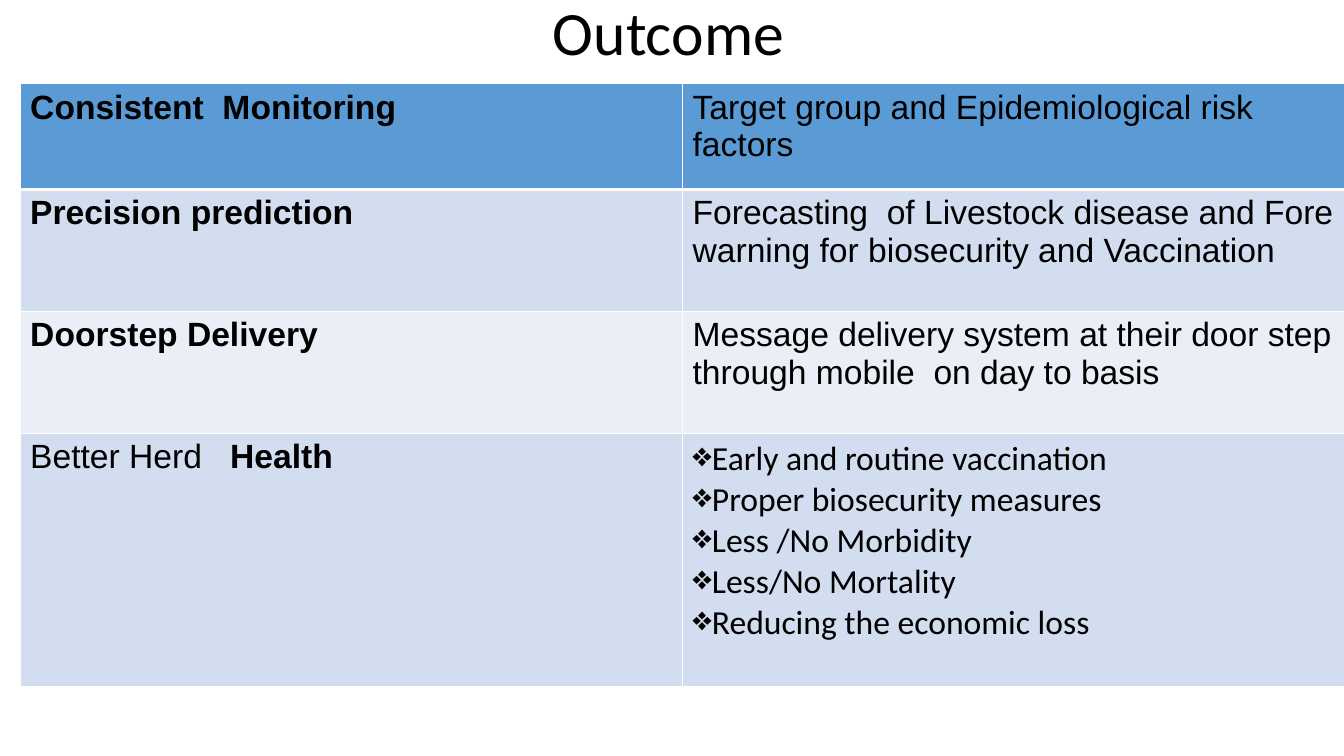
from lxml.etree import SubElement
from pptx import Presentation
from pptx.dml.color import RGBColor
from pptx.enum.text import MSO_ANCHOR, PP_ALIGN
from pptx.oxml import parse_xml
from pptx.oxml.ns import nsdecls, qn
from pptx.util import Inches, Pt

BLACK, WHITE = "000000", "FFFFFF"
HEADER, BAND_DARK, BAND_LIGHT = "5B9BD5", "D2DEEF", "EAEFF7"
BULLET_INDENT = Inches(0.19)

# Each row: height, fill, left-hand runs as (text, bold), right-hand text or bullets
OUTCOMES = [
    (1.05, HEADER, [("Consistent  Monitoring", True)],
     "Target group and Epidemiological risk factors"),
    (1.21, BAND_DARK, [("Precision prediction", True)],
     "Forecasting  of Livestock disease and Fore warning for biosecurity and Vaccination"),
    (1.21, BAND_LIGHT, [("Doorstep Delivery", True)],
     "Message delivery system at their door step through mobile  on day to basis"),
    (2.51, BAND_DARK, [("Better Herd   ", False), ("Health", True)],
     ["Early and routine vaccination", "Proper biosecurity measures",
      "Less /No Morbidity", "Less/No Mortality", "Reducing the economic loss"]),
]


def color(hex_code):
    return RGBColor.from_string(hex_code)


def add_span(para, text, size, font, bold=False):
    span = para.add_run()
    span.text = text
    span.font.size = Pt(size)
    span.font.name = font
    span.font.bold = bold
    span.font.color.rgb = color(BLACK)


def add_bullet(para):
    props = para._p.get_or_add_pPr()
    props.set("marL", str(BULLET_INDENT))
    props.set("indent", str(-BULLET_INDENT))
    SubElement(props, qn("a:buChar")).set("char", "❖")


def style_cell(cell, fill, bottom_width):
    """Fill the cell and draw white borders, the bottom one at its own width."""
    cell.fill.solid()
    cell.fill.fore_color.rgb = color(fill)
    props = cell._tc.get_or_add_tcPr()
    widths = {"lnL": 1, "lnR": 1, "lnT": 1, "lnB": bottom_width}
    for index, (side, width) in enumerate(widths.items()):
        props.insert(index, parse_xml(
            f'<a:{side} {nsdecls("a")} w="{Pt(width)}"><a:solidFill>'
            f'<a:srgbClr val="{WHITE}"/></a:solidFill></a:{side}>'))


def add_title(page, left, top, width, height):
    box = page.shapes.add_textbox(Inches(left), Inches(top), Inches(width), Inches(height))
    frame = box.text_frame
    frame.word_wrap = True
    frame.vertical_anchor = MSO_ANCHOR.MIDDLE
    para = frame.paragraphs[0]
    para.alignment = PP_ALIGN.CENTER
    para.line_spacing = 0.9
    add_span(para, "Outcome ", 44, "Calibri")


def add_outcome_table(page, left, top, width):
    height = sum(row[0] for row in OUTCOMES)
    table = page.shapes.add_table(len(OUTCOMES), 2, Inches(left), Inches(top),
                                  Inches(width), Inches(height)).table
    for column in table.columns:
        column.width = Inches(width / 2)
    for index, (row_height, fill, label, detail) in enumerate(OUTCOMES):
        table.rows[index].height = Inches(row_height)
        label_cell, detail_cell = table.cell(index, 0), table.cell(index, 1)
        for cell in (label_cell, detail_cell):
            style_cell(cell, fill, 3 if index == 0 else 1)
        for text, bold in label:
            add_span(label_cell.text_frame.paragraphs[0], text, 24, "Arial", bold)
        frame = detail_cell.text_frame
        if isinstance(detail, str):
            add_span(frame.paragraphs[0], detail, 24, "Arial")
            continue
        for number, text in enumerate(detail):
            para = frame.add_paragraph() if number else frame.paragraphs[0]
            add_bullet(para)
            add_span(para, text, 24, "Calibri")


def main():
    deck = Presentation()
    deck.slide_width, deck.slide_height = Inches(13.33), Inches(7.5)
    page = deck.slides.add_slide(deck.slide_layouts[6])
    add_title(page, 0.95, -0.37, 11.5, 1.45)
    add_outcome_table(page, 0.2, 0.83, 13.14)
    deck.save("out.pptx")


if __name__ == "__main__":
    main()
